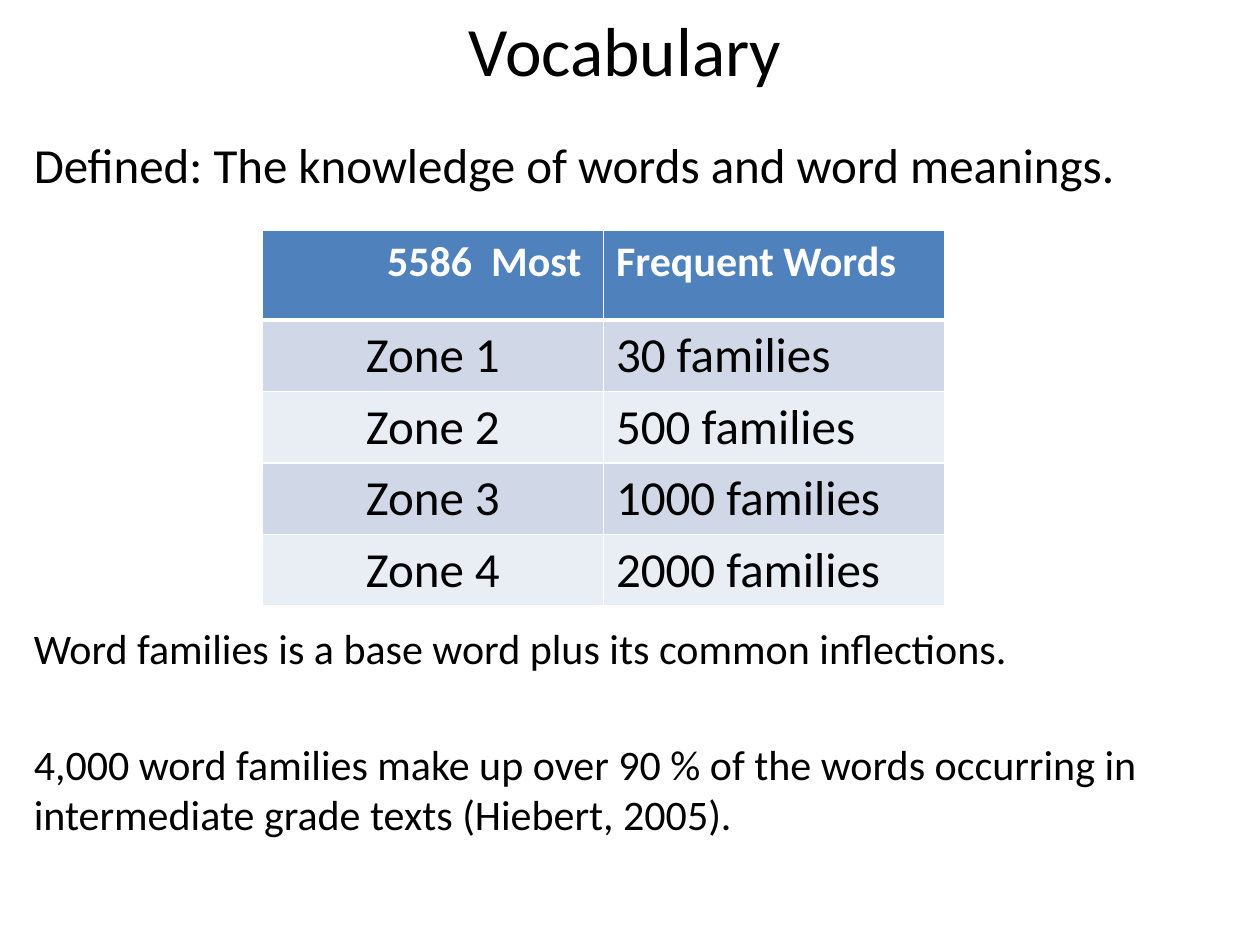
from lxml.etree import SubElement
from pptx import Presentation
from pptx.dml.color import RGBColor
from pptx.enum.text import MSO_ANCHOR as Anchor, PP_ALIGN as Align
from pptx.oxml.ns import qn
from pptx.util import Inches, Pt

FONT = "Calibri"
BLACK, WHITE = "000000", "FFFFFF"
HEADER_FILL = "4F81BD"
BAND_FILLS = ("D0D8E8", "E9EDF4")


def color(hex_value):
    return RGBColor.from_string(hex_value)


class SlideBuilder:
    def __init__(self, slide, font=FONT):
        self.slide = slide
        self.font = font

    def add_run(self, paragraph, text, size, hex_value=BLACK, bold=False):
        run = paragraph.add_run()
        run.text = text
        run.font.name = self.font
        run.font.size = Pt(size)
        run.font.bold = bold
        run.font.color.rgb = color(hex_value)

    def add_text(self, box, paragraphs, align=Align.LEFT, anchor=Anchor.TOP, top_inset=0.05):
        """Each paragraph is (text, size, space before in points)."""
        shape = self.slide.shapes.add_textbox(*map(Inches, box))
        frame = shape.text_frame
        frame.word_wrap = True
        frame.vertical_anchor = anchor
        frame.margin_top = Inches(top_inset)
        for index, (text, size, gap) in enumerate(paragraphs):
            paragraph = frame.add_paragraph() if index else frame.paragraphs[0]
            paragraph.alignment = align
            paragraph.space_before = Pt(gap)
            self.add_run(paragraph, text, size)

    def add_borders(self, cell, top, bottom):
        properties = cell._tc.get_or_add_tcPr()
        for side, width in (("L", 1), ("R", 1), ("T", top), ("B", bottom)):
            line = SubElement(properties, qn(f"a:ln{side}"), w=str(Pt(width)))
            fill = SubElement(line, qn("a:solidFill"))
            SubElement(fill, qn("a:srgbClr"), val=WHITE)

    def add_table(self, box, rows, heights):
        shape = self.slide.shapes.add_table(len(rows), len(rows[0]), *map(Inches, box))
        table = shape.table
        for row_index, (texts, height) in enumerate(zip(rows, heights)):
            table.rows[row_index].height = Inches(height)
            header = row_index == 0
            for column_index, text in enumerate(texts):
                cell = table.cell(row_index, column_index)
                self.add_borders(cell, 3 if row_index == 1 else 1, 3 if header else 1)
                cell.fill.solid()
                cell.fill.fore_color.rgb = color(
                    HEADER_FILL if header else BAND_FILLS[(row_index - 1) % 2])
                paragraph = cell.text_frame.paragraphs[0]
                first_align = Align.RIGHT if header else Align.CENTER
                paragraph.alignment = Align.LEFT if column_index else first_align
                self.add_run(paragraph, text, 24 if header else 28,
                             WHITE if header else BLACK, header)


def main():
    presentation = Presentation()
    presentation.slide_width, presentation.slide_height = Inches(10), Inches(7.5)
    builder = SlideBuilder(presentation.slides.add_slide(presentation.slide_layouts[6]))

    # Title
    builder.add_text((0.42, 0, 9.08, 0.78), [("Vocabulary", 39.6, 0)],
                     Align.CENTER, Anchor.MIDDLE)

    # Definition and notes, with room for the table between them
    builder.add_text((0.17, 1, 9.33, 6.33), [
        ("Defined: The knowledge of words and word meanings.", 28, 0),
        ("Word families is a base word plus its common inflections.", 24, 245),
        ("4,000 word families make up over 90 % of the words occurring in "
         "intermediate grade texts (Hiebert, 2005).", 24, 37.5),
    ], top_inset=0.07)

    # Word zones
    families = (30, 500, 1000, 2000)
    rows = [("5586  Most ", "Frequent Words")]
    rows += [(f"Zone {zone}", f"{count} families") for zone, count in enumerate(families, 1)]
    builder.add_table((2.08, 1.83, 5.42, 2.83), rows, [0.71] + [0.53] * len(families))

    presentation.save("out.pptx")


if __name__ == "__main__":
    main()
